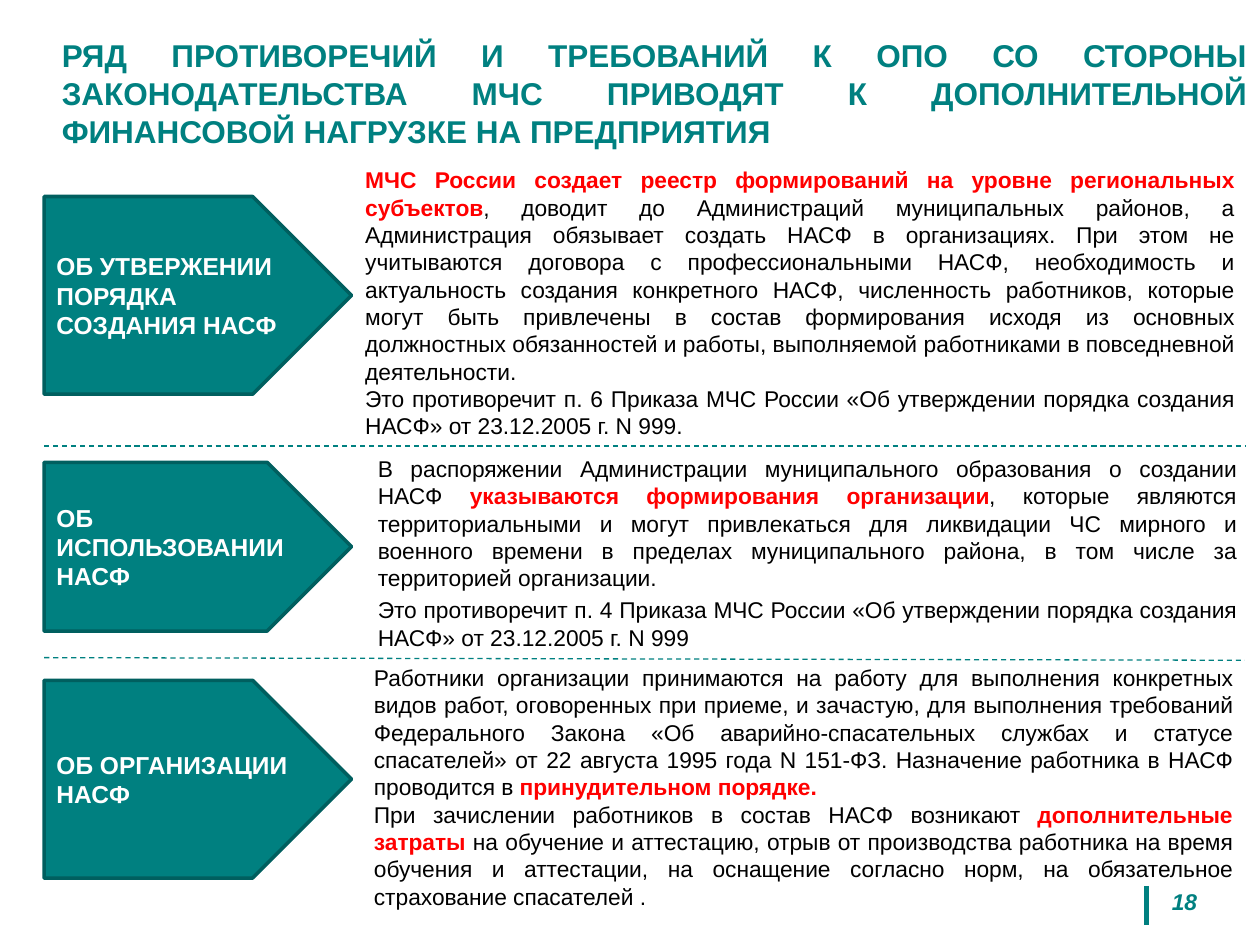
from lxml import etree
from pptx import Presentation
from pptx.dml.color import RGBColor
from pptx.enum.dml import MSO_LINE
from pptx.enum.shapes import MSO_CONNECTOR, MSO_SHAPE
from pptx.enum.text import MSO_ANCHOR, MSO_AUTO_SIZE, PP_ALIGN
from pptx.oxml.ns import qn
from pptx.util import Pt

TEAL, DARK_TEAL, RED, BLACK, WHITE = "008080", "005F5F", "FF0000", "000000", "FFFFFF"


def style(font, size, color, bold=False, italic=False):
    font.name, font.size, font.bold, font.italic = "Arial", Pt(size), bold, italic
    font.color.rgb = RGBColor.from_string(color)


def add_rule(x1, y1, x2, y2, width, dash=None):
    rule = slide.shapes.add_connector(MSO_CONNECTOR.STRAIGHT, Pt(x1), Pt(y1), Pt(x2), Pt(y2))
    rule.line.color.rgb = RGBColor.from_string(TEAL)
    rule.line.width = Pt(width)
    if dash:
        rule.line.dash_style = dash
    etree.SubElement(rule._element.spPr, qn("a:effectLst"))


prs = Presentation()
prs.slide_width, prs.slide_height = Pt(720), Pt(540)
slide = prs.slides.add_slide(prs.slide_layouts[5])

# Page number with its bar
add_rule(655.2, 506.2, 655.2, 528.5, 3)
page_number = slide.shapes.add_textbox(Pt(657.4), Pt(504), Pt(38.9), Pt(24.5))
page_number.text_frame.text = "18"
page_number.text_frame.paragraphs[0].alignment = PP_ALIGN.CENTER
style(page_number.text_frame.paragraphs[0].runs[0].font, 13, TEAL, bold=True, italic=True)

# Title
title = slide.shapes.title
title.left, title.top, title.width, title.height = Pt(28.1), Pt(9.4), Pt(691.9), Pt(87.1)
title.text_frame.text = (
    "РЯД ПРОТИВОРЕЧИЙ И ТРЕБОВАНИЙ К ОПО СО СТОРОНЫ ЗАКОНОДАТЕЛЬСТВА МЧС "
    "ПРИВОДЯТ К ДОПОЛНИТЕЛЬНОЙ ФИНАНСОВОЙ НАГРУЗКЕ НА ПРЕДПРИЯТИЯ"
)
title.text_frame.auto_size = MSO_AUTO_SIZE.NONE
title.text_frame.vertical_anchor = MSO_ANCHOR.MIDDLE
title.text_frame.paragraphs[0].alignment = PP_ALIGN.JUSTIFY
style(title.text_frame.paragraphs[0].runs[0].font, 18, TEAL, bold=True)

# Topics: arrow label, arrow top and height, text box, paragraph gap,
# paragraphs as (text, highlighted) pieces
topics = [
    ("ОБ УТВЕРЖЕНИИ ПОРЯДКА СОЗДАНИЯ НАСФ", 112.3, 113, (201.6, 91.4, 510.5, 164.9), 0, [
        [("МЧС России создает реестр формирований на уровне региональных субъектов", True),
         (", доводит до Администраций муниципальных районов, а Администрация обязывает "
          "создать НАСФ в организациях. При этом не учитываются договора с "
          "профессиональными НАСФ, необходимость и актуальность создания конкретного "
          "НАСФ, численность работников, которые могут быть привлечены в состав "
          "формирования исходя из основных должностных обязанностей и работы, "
          "выполняемой работниками в повседневной деятельности.", False)],
        [("Это противоречит п. 6 Приказа МЧС России «Об утверждении порядка создания "
          "НАСФ» от 23.12.2005 г. N 999.", False)],
    ]),
    ("ОБ ИСПОЛЬЗОВАНИИ НАСФ", 264.2, 96.5, (208.8, 256.3, 504.7, 121), 2.6, [
        [("В распоряжении Администрации муниципального образования о создании НАСФ ", False),
         ("указываются формирования организации", True),
         (", которые являются территориальными и могут привлекаться для ликвидации ЧС "
          "мирного и военного времени в пределах муниципального района, в том числе за "
          "территорией организации.", False)],
        [("Это противоречит п. 4 Приказа МЧС России «Об утверждении порядка создания "
          "НАСФ» от 23.12.2005 г. N 999", False)],
    ]),
    ("ОБ ОРГАНИЗАЦИИ НАСФ", 388.8, 113, (206.6, 375.8, 504.7, 149), 0, [
        [("Работники организации принимаются на работу для выполнения конкретных видов "
          "работ, оговоренных при приеме, и зачастую, для выполнения требований "
          "Федерального Закона «Об аварийно-спасательных службах и статусе спасателей» "
          "от 22 августа 1995 года N 151-ФЗ. Назначение работника в НАСФ проводится в ",
          False),
         ("принудительном порядке.", True)],
        [("При зачислении работников в состав НАСФ возникают ", False),
         ("дополнительные затраты ", True),
         ("на обучение и аттестацию, отрыв от производства работника на время обучения и "
          "аттестации, на оснащение согласно норм, на обязательное страхование "
          "спасателей .", False)],
    ]),
]

for label, arrow_top, arrow_height, box, gap, paragraphs in topics:
    # Arrow with the topic
    arrow = slide.shapes.add_shape(
        MSO_SHAPE.PENTAGON, Pt(25.2), Pt(arrow_top), Pt(175.7), Pt(arrow_height))
    arrow.shadow.inherit = False
    arrow.fill.solid()
    arrow.fill.fore_color.rgb = RGBColor.from_string(TEAL)
    arrow.line.color.rgb = RGBColor.from_string(DARK_TEAL)
    arrow.line.width = Pt(2)
    arrow.text_frame.text = label
    arrow.text_frame.vertical_anchor = MSO_ANCHOR.MIDDLE
    arrow.text_frame.paragraphs[0].alignment = PP_ALIGN.LEFT
    style(arrow.text_frame.paragraphs[0].runs[0].font, 14, WHITE, bold=True)

    # Explanation
    explanation = slide.shapes.add_textbox(*map(Pt, box)).text_frame
    explanation.word_wrap = True
    for i, pieces in enumerate(paragraphs):
        paragraph = explanation.add_paragraph() if i else explanation.paragraphs[0]
        paragraph.alignment = PP_ALIGN.JUSTIFY
        if i:
            paragraph.space_before = Pt(gap)
        for text, highlighted in pieces:
            run = paragraph.add_run()
            run.text = text
            style(run.font, 13, RED if highlighted else BLACK, bold=highlighted)

# Dashed dividers between topics
for y_left, y_right in [(254.9, 254.9), (375.8, 377.3)]:
    add_rule(25.2, y_left, 711.4, y_right, 0.75, MSO_LINE.DASH)

prs.save("out.pptx")
